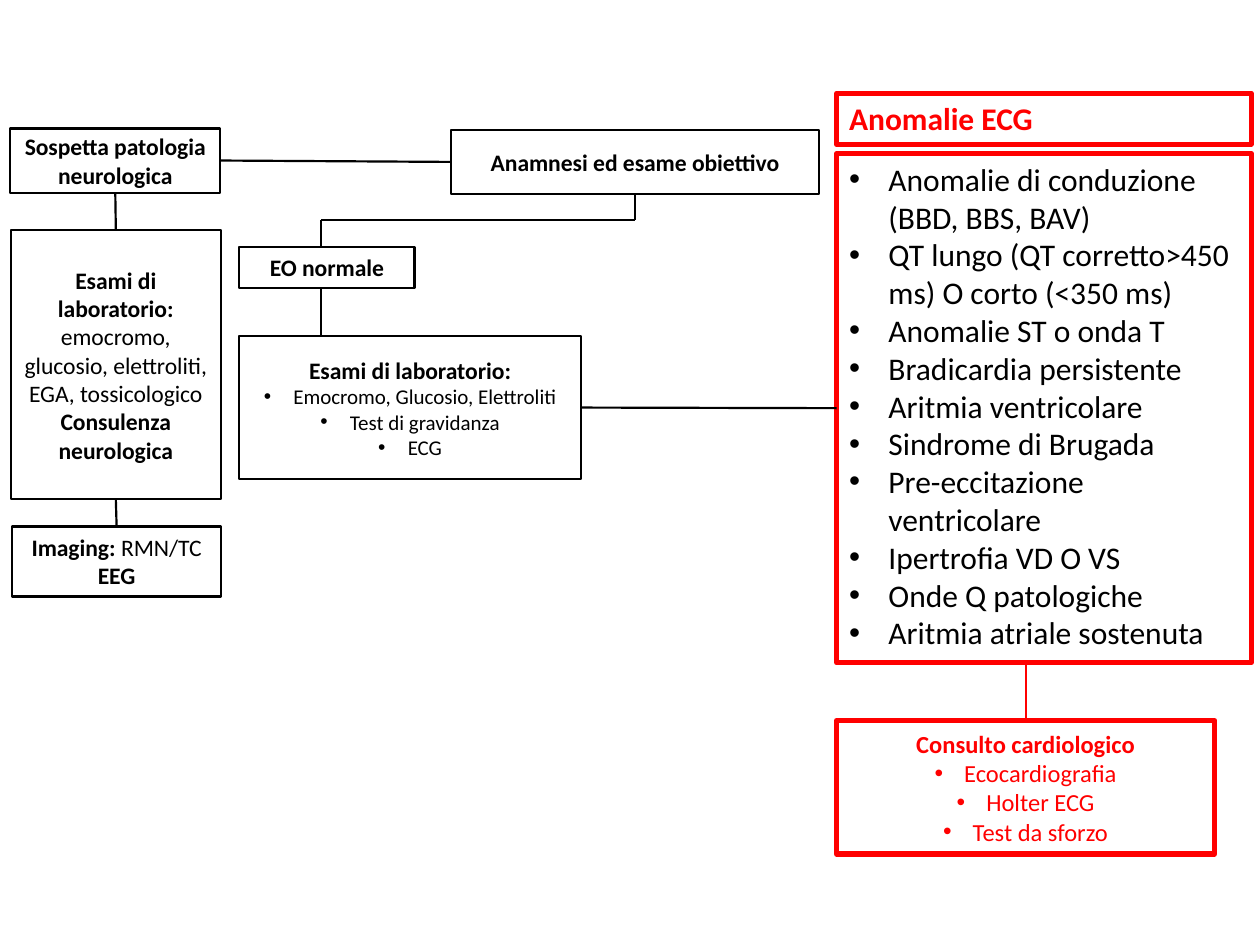
import pptx
import pptx.util
import pptx.dml.color
import pptx.enum.shapes
import pptx.enum.text
from lxml import etree

Pt = pptx.util.Pt
ALIGN = pptx.enum.text.PP_ALIGN
ANCHOR = pptx.enum.text.MSO_ANCHOR
COLORS = {"black": "000000", "white": "FFFFFF", "red": "FF0000"}
TOP, LEFT, BOTTOM, RIGHT = range(4)

# Styles: formats shared by the boxes
STEP = {"color": "black", "fill": "white", "width": 1.25, "size": 13.5,
        "anchor": ANCHOR.MIDDLE, "align": ALIGN.CENTER, "indent": 16.9}
IMAGING = {**STEP, "fill": None, "width": 1.5, "anchor": ANCHOR.TOP}
CONSULT = {**STEP, "color": "red", "width": 3, "size": 14}
ECG_TITLE = {**CONSULT, "fill": None, "size": 18, "anchor": ANCHOR.TOP,
             "align": ALIGN.LEFT, "indent": 22.5}
ECG_LIST = {**ECG_TITLE, "text_color": "black"}

# Content: box -> (left, top, width, height), style, paragraphs
# A paragraph is a list of (text, bold) runs; a plain string is a bullet.
BOXES = {
    "history": ((257.8, 74.2, 210.2, 36.7), STEP,
                [[("Anamnesi ed esame obiettivo", True)]]),
    "normal exam": ((136.8, 141.1, 100.1, 23.5), STEP, [[("EO normale", True)]]),
    "cardiology": ((478.1, 411.8, 216, 76.3), CONSULT,
                   [[("Consulto cardiologico", True)],
                    "Ecocardiografia", "Holter ECG", "Test da sforzo"]),
    "lab tests": ((136.8, 192.2, 195.1, 81.4), {**STEP, "bullet_size": 12},
                  [[("Esami di laboratorio:", True)],
                   "Emocromo, Glucosio, Elettroliti", "Test di gravidanza", "ECG"]),
    "neurology": ((5.8, 73.4, 120.2, 36.7), STEP,
                  [[("Sospetta patologia neurologica", True)]]),
    "neuro tests": ((6.1, 131.3, 120.2, 154.1), STEP,
                    [[("Esami di laboratorio: ", True),
                      ("emocromo, glucosio, elettroliti, EGA, tossicologico", False)],
                     [("Consulenza neurologica", True)]]),
    "imaging": ((6.9, 301, 119.5, 39.8), IMAGING,
                [[("Imaging: ", True), ("RMN/TC", False)], [("EEG", True)]]),
    "ECG findings": ((478.1, 87.8, 236.9, 290.9), ECG_LIST,
                     ["Anomalie di conduzione (BBD, BBS, BAV)",
                      "QT lungo (QT corretto>450 ms) O corto (<350 ms)",
                      "Anomalie ST o onda T", "Bradicardia persistente",
                      "Aritmia ventricolare", "Sindrome di Brugada",
                      "Pre-eccitazione ventricolare", "Ipertrofia VD O VS",
                      "Onde Q patologiche", "Aritmia atriale sostenuta"]),
    "ECG title": ((478.1, 53.3, 236.9, 29.1), ECG_TITLE, [[("Anomalie ECG", True)]]),
}

# Lines: each end is a point or a (box, side) joint
BRANCH_X, BRANCH_Y, HISTORY_X, CONSULT_X = 183.6, 125.7, 362.9, 586.1
LINES = [
    (("history", BOTTOM), (HISTORY_X, BRANCH_Y), "black"),
    ((BRANCH_X, BRANCH_Y), (HISTORY_X, BRANCH_Y), "black"),
    ((BRANCH_X, BRANCH_Y), (BRANCH_X, 140.4), "black"),
    ((BRANCH_X, 164.5), (BRANCH_X, 192.2), "black"),
    (("neurology", RIGHT), ("history", LEFT), "black"),
    (("neurology", BOTTOM), ("neuro tests", TOP), "black"),
    (("neuro tests", BOTTOM), ("imaging", TOP), "black"),
    (("lab tests", RIGHT), ("ECG findings", LEFT), "black"),
    ((CONSULT_X, 378.7), ("cardiology", TOP), "red"),
]


def rgb(name):
    return pptx.dml.color.RGBColor.from_string(COLORS[name])


def apply(target, formats):
    for name, value in formats.items():
        setattr(target, name, value)


def add_bullet(paragraph, indent):
    properties = paragraph._p.get_or_add_pPr()
    properties.set("marL", str(Pt(indent)))
    properties.set("indent", str(-Pt(indent)))
    for tag, key, value in (("a:buFont", "typeface", "Arial"), ("a:buChar", "char", "•")):
        etree.SubElement(properties, pptx.oxml.ns.qn(tag)).set(key, value)


def add_box(slide, place, style, paragraphs):
    box = slide.shapes.add_shape(pptx.enum.shapes.MSO_SHAPE.RECTANGLE,
                                 *(Pt(length) for length in place))
    box.shadow.inherit = False
    if style["fill"]:
        box.fill.solid()
        box.fill.fore_color.rgb = rgb(style["fill"])
    else:
        box.fill.background()
    box.line.color.rgb = rgb(style["color"])
    box.line.width = Pt(style["width"])
    frame = box.text_frame
    apply(frame, {"word_wrap": True, "vertical_anchor": style["anchor"]})
    for index, content in enumerate(paragraphs):
        paragraph = frame.paragraphs[0] if index == 0 else frame.add_paragraph()
        paragraph.alignment = style["align"]
        size, runs = style["size"], content
        if isinstance(content, str):
            add_bullet(paragraph, style["indent"])
            size, runs = style.get("bullet_size", size), [(content, False)]
        for text, bold in runs:
            run = paragraph.add_run()
            run.text = text
            apply(run.font, {"name": "Calibri", "size": Pt(size), "bold": bold})
            run.font.color.rgb = rgb(style.get("text_color", style["color"]))
    return box


def add_line(slide, boxes, start, end, color):
    points = [(0, 0) if isinstance(stop[0], str) else stop for stop in (start, end)]
    line = slide.shapes.add_connector(pptx.enum.shapes.MSO_CONNECTOR.STRAIGHT,
                                      *(Pt(value) for point in points for value in point))
    for stop, connect in ((start, line.begin_connect), (end, line.end_connect)):
        if isinstance(stop[0], str):
            connect(boxes[stop[0]], stop[1])
    line.line.color.rgb = rgb(color)
    line.line.width = Pt(1.25)
    etree.SubElement(line._element.spPr, pptx.oxml.ns.qn("a:effectLst"))


def main():
    deck = pptx.Presentation()
    apply(deck, {"slide_width": Pt(720), "slide_height": Pt(540)})
    slide = deck.slides.add_slide(deck.slide_layouts[6])
    boxes = {name: add_box(slide, *parts) for name, parts in BOXES.items()}
    for start, end, color in LINES:
        add_line(slide, boxes, start, end, color)
    deck.save("out.pptx")


if __name__ == "__main__":
    main()
